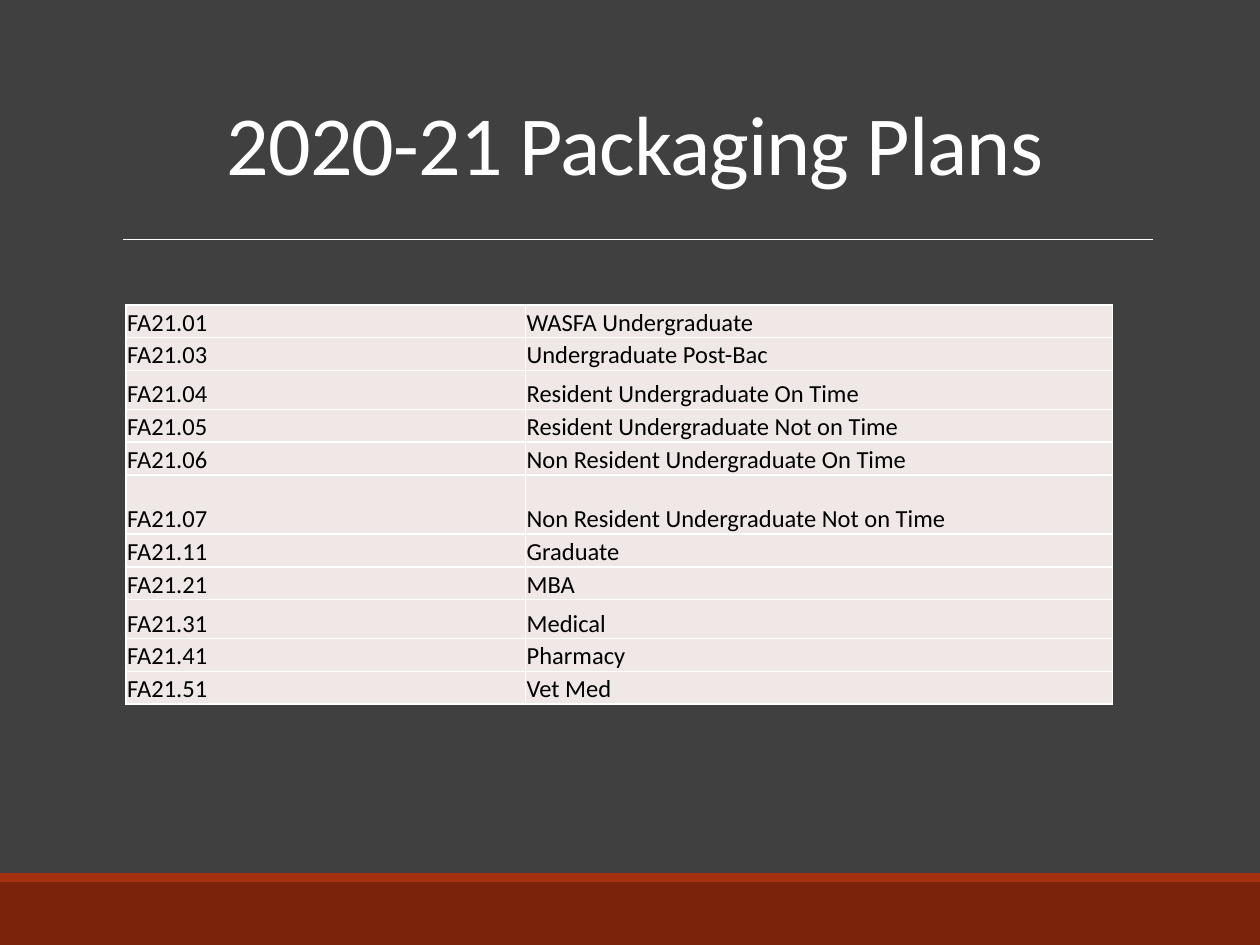
from lxml import etree
from pptx import Presentation
from pptx.dml.color import RGBColor
from pptx.enum.shapes import MSO_CONNECTOR, MSO_SHAPE
from pptx.enum.text import MSO_ANCHOR, PP_ALIGN
from pptx.oxml.ns import qn
from pptx.util import Inches, Pt

RECT = MSO_SHAPE.RECTANGLE
STRAIGHT = MSO_CONNECTOR.STRAIGHT
BOTTOM = MSO_ANCHOR.BOTTOM
CENTER = PP_ALIGN.CENTER

FONT = "Calibri"
WHITE = "FFFFFF"
PLANS = [
    ("FA21.01", "WASFA Undergraduate"),
    ("FA21.03", "Undergraduate Post-Bac"),
    ("FA21.04", "Resident Undergraduate On Time"),
    ("FA21.05", "Resident Undergraduate Not on Time"),
    ("FA21.06", "Non Resident Undergraduate On Time"),
    ("FA21.07", "Non Resident Undergraduate Not on Time"),
    ("FA21.11", "Graduate"),
    ("FA21.21", "MBA"),
    ("FA21.31", "Medical"),
    ("FA21.41", "Pharmacy"),
    ("FA21.51", "Vet Med"),
]
ROW = 0.26
TALL = {"FA21.04": 0.31, "FA21.07": 0.47, "FA21.31": 0.31}


def color(code):
    return RGBColor.from_string(code)


def style(para, size, code):
    para.font.name = FONT
    para.font.size = Pt(size)
    para.font.color.rgb = color(code)


def add_band(slide, left, top, width, height, code):
    band = slide.shapes.add_shape(
        RECT, Inches(left), Inches(top), Inches(width), Inches(height))
    band.shadow.inherit = False
    band.fill.solid()
    band.fill.fore_color.rgb = color(code)
    band.line.fill.background()


def add_footer(slide, left, top, width, height):
    strip = 0.07
    add_band(slide, left, top + strip, width, height - strip, "7C240B")
    add_band(slide, left, top, width, strip, "A5300F")


def add_rule(slide, left, top, width):
    rule = slide.shapes.add_connector(
        STRAIGHT, Inches(left), Inches(top), Inches(left + width), Inches(top))
    rule.line.color.rgb = color(WHITE)
    rule.line.width = Pt(0.5)
    etree.SubElement(rule._element.spPr, qn("a:effectLst"))


def add_title(slide, left, top, width, height, text):
    box = slide.shapes.add_textbox(
        Inches(left), Inches(top), Inches(width), Inches(height))
    frame = box.text_frame
    frame.word_wrap = True
    frame.vertical_anchor = BOTTOM
    para = frame.paragraphs[0]
    para.alignment = CENTER
    para.line_spacing = 0.85
    run = para.add_run()
    run.text = text
    style(para, 48, WHITE)
    run.font._element.set("spc", "-50")


def add_borders(cell):
    props = cell._tc.get_or_add_tcPr()
    for side in ("lnL", "lnR", "lnT", "lnB"):
        line = etree.SubElement(props, qn("a:" + side), w=str(Pt(1)))
        fill = etree.SubElement(line, qn("a:solidFill"))
        etree.SubElement(fill, qn("a:srgbClr"), val=WHITE)


def fill_cell(cell, text):
    add_borders(cell)  # the schema wants borders ahead of the fill
    cell.fill.solid()
    cell.fill.fore_color.rgb = color("F0E8E7")
    cell.vertical_anchor = BOTTOM
    cell.margin_left = cell.margin_right = cell.margin_top = Inches(0.01)
    cell.margin_bottom = 0
    cell.text = text
    style(cell.text_frame.paragraphs[0], 14, "000000")


def add_plans(slide, left, top, width):
    heights = [TALL.get(code, ROW) for code, _ in PLANS]
    table = slide.shapes.add_table(
        len(PLANS), 2, Inches(left), Inches(top),
        Inches(width), Inches(sum(heights))).table
    first = 3.17
    table.columns[0].width = Inches(first)
    table.columns[1].width = Inches(width - first)
    for row, height, plan in zip(table.rows, heights, PLANS):
        row.height = Inches(height)
        for cell, text in zip(row.cells, plan):
            fill_cell(cell, text)


def main():
    deck = Presentation()
    deck.slide_width, deck.slide_height = Inches(10), Inches(7.5)
    slide = deck.slides.add_slide(deck.slide_layouts[6])
    slide.background.fill.solid()
    slide.background.fill.fore_color.rgb = color("404040")
    add_footer(slide, 0, 6.93, 10, 0.57)
    add_rule(slide, 0.98, 1.9, 8.17)
    add_title(slide, 0.58, 0.33, 8.92, 1.25, "2020-21 Packaging Plans")
    add_plans(slide, 1, 2.42, 7.83)
    deck.save("out.pptx")


if __name__ == "__main__":
    main()
